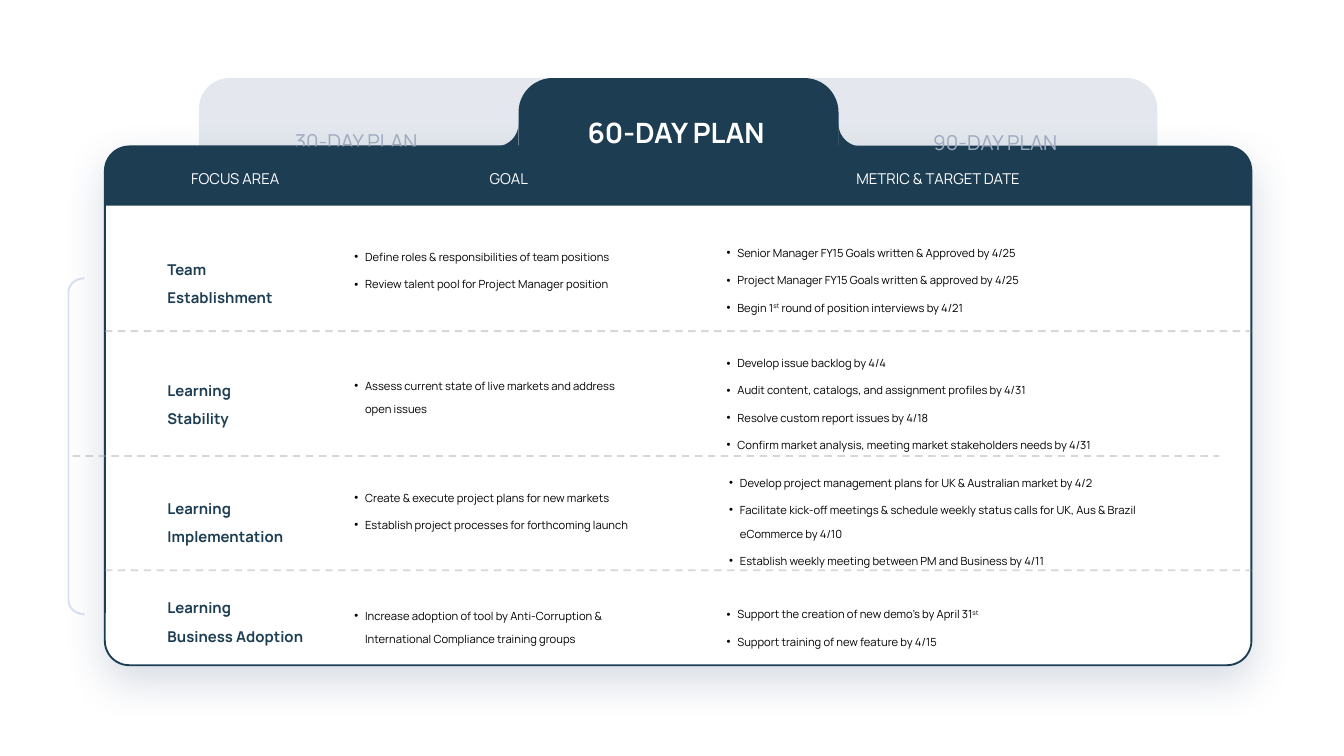
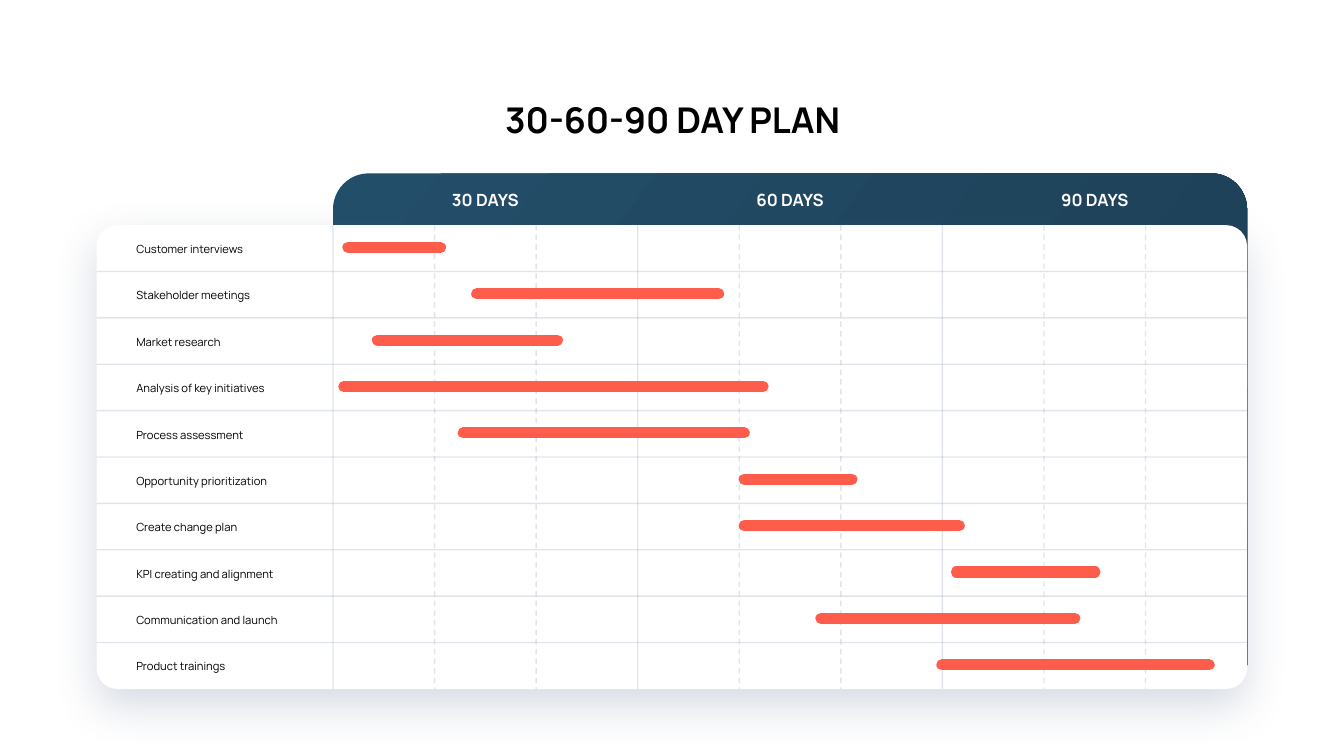
from dataclasses import dataclass
from math import cos, pi, sin

from lxml import etree
from pptx import Presentation
from pptx.dml.color import RGBColor
from pptx.enum.dml import MSO_LINE
from pptx.enum.shapes import MSO_CONNECTOR, MSO_SHAPE
from pptx.enum.text import MSO_ANCHOR, MSO_AUTO_SIZE, PP_ALIGN
from pptx.oxml.ns import qn
from pptx.util import Pt

NAVY = RGBColor(0x1C, 0x3D, 0x52)
BLUE = RGBColor(0x23, 0x4E, 0x6A)
PALE = RGBColor(0xE4, 0xE8, 0xEE)
SLATE = RGBColor(0x9E, 0xAA, 0xBE)
GREY = RGBColor(0xA5, 0xA5, 0xA5)
SKY = RGBColor(0xAF, 0xC2, 0xE5)
CORAL = RGBColor(0xFF, 0x5D, 0x4C)
SHADE = RGBColor(0x47, 0x5D, 0x84)
WHITE = RGBColor(0xFF, 0xFF, 0xFF)
BLACK = RGBColor(0x00, 0x00, 0x00)

FONT = "Manrope"
LEFT, CENTER = PP_ALIGN.LEFT, PP_ALIGN.CENTER
TOP, MIDDLE = MSO_ANCHOR.TOP, MSO_ANCHOR.MIDDLE
NO_FIT = MSO_AUTO_SIZE.NONE
DASH = MSO_LINE.DASH
STRAIGHT = MSO_CONNECTOR.STRAIGHT
RECT, ROUND = MSO_SHAPE.RECTANGLE, MSO_SHAPE.ROUNDED_RECTANGLE
ROUND_TOP, BRACKET = MSO_SHAPE.ROUND_2_SAME_RECTANGLE, MSO_SHAPE.LEFT_BRACKET
COMPARISON, TITLE_ONLY = 4, 5


@dataclass
class Box:
    """A rectangle on the page, in points."""
    left: float
    top: float
    width: float
    height: float

    def inside(self, x, y, width, height):
        """Return a box placed relative to this one."""
        return Box(self.left + x, self.top + y, width, height)

    def lengths(self):
        """Return the four lengths for python-pptx."""
        return [Pt(value) for value in (self.left, self.top, self.width, self.height)]


@dataclass
class Row:
    """One focus area with its goals and metrics; places are relative to the card."""
    name: list
    name_place: tuple
    goals: list
    goals_place: tuple
    metrics: list
    metrics_place: tuple
    anchor: object = TOP


ROWS = [
    Row(["Team", "Establishment"], (28.1, 52.6, 74, 28.8),
        ["Define roles & responsibilities of team positions",
         "Review talent pool for Project Manager position"], (128.2, 47.5, 193.7, 39.6),
        ["Senior Manager FY15 Goals written & Approved by 4/25",
         "Project Manager FY15 Goals written & approved by 4/25",
         "Begin 1^st^ round of position interviews by 4/21"], (327.6, 45.4, 193.7, 51)),
    Row(["Learning", "Stability"], (28.1, 117.4, 88.6, 28.8),
        ["Assess current state of live markets and address open issues"],
        (128.2, 116.6, 161.3, 26),
        ["Develop issue backlog by 4/4",
         "Audit content, catalogs, and assignment profiles by 4/31",
         "Resolve custom report issues by 4/18",
         "Confirm market analysis, meeting market stakeholders needs by 4/31"],
        (327.6, 104.4, 269.3, 52.6)),
    Row(["Learning", "Implementation"], (28.1, 180.7, 96.5, 28.8),
        ["Create & execute project plans for new markets",
         "Establish project processes for forthcoming launch"], (128.2, 176.4, 177.8, 48.2),
        ["Develop project management plans for UK & Australian market by 4/2",
         "Facilitate kick-off meetings & schedule weekly status calls for UK, Aus & Brazil "
         "eCommerce by 4/10",
         "Establish weekly meeting between PM and Business by 4/11"],
        (329, 168.5, 261.4, 54.7)),
    Row(["Learning", "Business Adoption"], (28.1, 237.6, 108.7, 28.8),
        ["Increase adoption of tool by Anti-Corruption & International Compliance "
         "training groups"], (128.2, 239.8, 165.6, 26),
        ["Support the creation of new demo’s by April 31^st^",
         "Support training of new feature by 4/15"], (327.6, 239, 263.5, 27.4), MIDDLE),
]

HEADINGS = [("FOCUS AREA", 28.1, 83.5), ("GOAL", 179.3, 74.2),
            ("METRIC & TARGET DATE", 367.9, 157)]
DIVIDERS = [(0, 227), (-17.3, 165.8), (0, 98.9)]

TASKS = [
    ("Customer interviews", 72.7, 8, 57.6),
    ("Stakeholder meetings", 77, 77, 206.6),
    ("Market research", 59.8, 23.8, 120.2),
    ("Analysis of key initiatives", 85, 5.8, 230.4),
    ("Process assessment", 72, 69.8, 220.3),
    ("Opportunity prioritization", 86.4, 220.3, 278),
    ("Create change plan", 72, 220.3, 335.5),
    ("KPI creating and alignment", 92.9, 334, 408.2),
    ("Communication and launch", 96.5, 261.4, 397.4),
    ("Product trainings", 62.6, 326.2, 469.4),
]


def place(holder, box):
    """Move a placeholder to a box and to the front of the page."""
    holder.left, holder.top, holder.width, holder.height = box.lengths()
    holder.element.getparent().append(holder.element)
    return holder


def write(holder, lines, size, color, bold=False, align=LEFT, anchor=TOP,
          spacing=1.0, bullets=False):
    """Fill a shape with paragraphs; text between carets is raised."""
    frame = holder.text_frame
    frame.word_wrap, frame.auto_size, frame.vertical_anchor = True, NO_FIT, anchor
    frame.margin_left = frame.margin_right = Pt(5.4)
    frame.margin_top = frame.margin_bottom = Pt(2.7)
    for index, line in enumerate(lines):
        para = frame.add_paragraph() if index else frame.paragraphs[0]
        para.alignment, para.line_spacing = align, spacing
        para.space_before = Pt(2 if bullets and index else 0)
        if bullets:
            add_bullet(para)
        for part, words in enumerate(line.split("^")):
            if not words:
                continue
            span = para.add_run()
            span.text = words
            span.font.name, span.font.size, span.font.bold = FONT, Pt(size), bold
            span.font.color.rgb = color
            if part % 2:
                span.font._element.set("baseline", "30000")


def add_bullet(para):
    """Give a paragraph a black dot and a hanging indent."""
    props = para._p.get_or_add_pPr()
    props.set("marL", str(Pt(5.8)))
    props.set("indent", str(-Pt(8.6)))
    color = etree.SubElement(props, qn("a:buClr"))
    etree.SubElement(color, qn("a:srgbClr"), val=str(BLACK))
    etree.SubElement(props, qn("a:buFont"), typeface="Arial")
    etree.SubElement(props, qn("a:buChar"), char="•")


def add_text(page, box, text, size, color, **style):
    """Add a text box with one line."""
    write(page.shapes.add_textbox(*box.lengths()), [text], size, color, **style)


def fade(shape, percent):
    """Make the colours of a shape partly transparent."""
    for color in shape.element.spPr.iter(qn("a:srgbClr")):
        etree.SubElement(color, qn("a:alpha"), val=str(percent * 1000))


def add_panel(page, kind, box, fill, adjust=None):
    """Add a flat shape without outline."""
    shape = page.shapes.add_shape(kind, *box.lengths())
    shape.shadow.inherit = False
    shape.line.fill.background()
    if fill is None:
        shape.fill.background()
    else:
        shape.fill.solid()
        shape.fill.fore_color.rgb = fill
    if adjust is not None:
        shape.adjustments[0] = adjust
    return shape


def add_card(page, box, adjust):
    """Add a white rounded card with a soft shadow."""
    card = add_panel(page, ROUND, box, WHITE, adjust)
    effects = card.element.spPr.find(qn("a:effectLst"))
    shadow = etree.SubElement(effects, qn("a:outerShdw"), blurRad=str(Pt(23)),
                              dist=str(Pt(8.7)), dir="5400000", rotWithShape="0")
    color = etree.SubElement(shadow, qn("a:srgbClr"), val=str(SHADE))
    etree.SubElement(color, qn("a:alpha"), val="22000")
    return card


def add_line(page, start, end, color, width, dash=None, opacity=None, rounded=False):
    """Add a straight line between two points."""
    line = page.shapes.add_connector(STRAIGHT, *[Pt(value) for value in (*start, *end)])
    line.line.color.rgb, line.line.width = color, Pt(width)
    if dash:
        line.line.dash_style = dash
    if opacity:
        fade(line, opacity)
    if rounded:
        line.element.spPr.find(qn("a:ln")).set("cap", "rnd")
    etree.SubElement(line.element.spPr, qn("a:effectLst"))


def add_fillet(page, x, y, side):
    """Add the concave corner that joins the tab to the card."""
    radius, steps = 12.2, 12
    builder = page.shapes.build_freeform(Pt(x), Pt(y))
    angles = [pi / 2 * step / steps for step in range(steps + 1)]
    builder.add_line_segments(
        [(Pt(x + side * radius * (1 - cos(angle))), Pt(y - radius * (1 - sin(angle))))
         for angle in angles])
    fillet = builder.convert_to_shape()
    fillet.shadow.inherit = False
    fillet.fill.solid()
    fillet.fill.fore_color.rgb = NAVY
    fillet.line.fill.background()


def draw_tabs(page, card):
    """Draw the front tab and the first faded label above the card."""
    tab = card.inside(221.6, -36.7, 171.4, 36.7)
    add_panel(page, ROUND_TOP, tab, NAVY, 0.497)
    add_fillet(page, tab.left + tab.width, card.top, 1)
    add_fillet(page, tab.left, card.top, -1)
    add_text(page, card.inside(92.9, -28.8, 83.5, 28), "30-DAY PLAN", 11, SLATE,
             align=CENTER, spacing=2.27)
    title = place(page.shapes.title, card.inside(249.1, -28.8, 113.8, 29.5))
    write(title, ["60-DAY PLAN"], 15, WHITE, True, CENTER, MIDDLE, 1.7)


def draw_header(page, card):
    """Draw the band with the column headings."""
    add_panel(page, ROUND_TOP, card.inside(0, 0, card.width, 31.7), NAVY, 0.401)
    for heading, x, width in HEADINGS:
        cell = add_panel(page, RECT, card.inside(x, 10, width, 14.4), NAVY)
        write(cell, [heading], 8, WHITE, align=CENTER, anchor=MIDDLE)


def draw_row(page, card, row, body):
    """Write one focus area with its two lists."""
    name = page.shapes.add_textbox(*card.inside(*row.name_place).lengths())
    write(name, row.name, 8, NAVY, True, anchor=row.anchor, spacing=1.6)
    goals = page.shapes.add_textbox(*card.inside(*row.goals_place).lengths())
    metrics = place(body, card.inside(*row.metrics_place))
    for holder, items in ((goals, row.goals), (metrics, row.metrics)):
        write(holder, items, 6, BLACK, spacing=1.75, bullets=True)


def build_sixty_day_plan(deck, card):
    """Build the page with the 60-day goals and metrics."""
    page = deck.slides.add_slide(deck.slide_layouts[COMPARISON])
    bodies = [holder for holder in page.placeholders if holder.placeholder_format.idx]
    add_panel(page, ROUND_TOP, card.inside(50.4, -36.7, 513.4, 52.6), PALE, 0.312)
    frame = add_card(page, card, 0.047)
    frame.line.color.rgb, frame.line.width = NAVY, Pt(1)
    draw_tabs(page, card)
    draw_header(page, card)
    for row, body in zip(ROWS, bodies):
        draw_row(page, card, row, body)
    for x, y in DIVIDERS:
        left, level = card.left + x, card.top + y
        add_line(page, (left, level), (left + card.width, level), GREY, 1, DASH, 43)
    bracket = add_panel(page, BRACKET, card.inside(-19.5, 70.6, 8.6, 180), None, 0.842)
    bracket.line.color.rgb, bracket.line.width = SKY, Pt(1)
    fade(bracket, 50)
    add_text(page, card.inside(434.9, -24.5, 84.2, 28), "90-DAY PLAN", 11, SLATE,
             align=CENTER, anchor=MIDDLE, spacing=2.27)


def draw_grid(page, card, chart):
    """Rule the rows, the months and their thirds."""
    pitch, step = card.height / len(TASKS), chart.width / 9
    right, bottom = card.left + card.width, card.top + card.height
    for index in range(1, len(TASKS)):
        level = card.top + index * pitch
        add_line(page, (card.left, level), (right, level), SLATE, 0.75, opacity=30)
    for index in range(9):
        x = chart.left + index * step
        add_line(page, (x, card.top), (x, bottom), SLATE, 0.75,
                 DASH if index % 3 else None, 30)


def draw_tasks(page, card, chart):
    """Write the task names and draw their bars."""
    pitch = card.height / len(TASKS)
    for index, (task, width, start, end) in enumerate(TASKS):
        add_text(page, card.inside(15.8, index * pitch + 6.5, width, 13), task, 6, BLACK)
        level = card.top + (index + 0.48) * pitch
        add_line(page, (chart.left + start, level), (chart.left + end, level),
                 CORAL, 6, rounded=True)


def build_timeline(deck, card):
    """Build the page with the 30-60-90 day timeline."""
    page = deck.slides.add_slide(deck.slide_layouts[TITLE_ONLY])
    chart = card.inside(126.6, 0, card.width - 126.6, card.height)
    header = add_panel(page, ROUND_TOP, chart.inside(0, -27.7, chart.width, 263.5), NAVY, 0.073)
    header.fill.gradient()
    header.fill.gradient_angle = 322
    for stop, color, position in zip(header.fill.gradient_stops, (BLUE, NAVY), (0, 1)):
        stop.color.rgb, stop.position = color, position
    add_card(page, card, 0.045)
    draw_grid(page, card, chart)
    month = chart.width / 3
    for index, days in enumerate((30, 60, 90)):
        add_text(page, chart.inside((index + 0.5) * month - 24.8, -21.4, 49.6, 16.6),
                 f"{days} DAYS", 9, WHITE, bold=True, align=CENTER)
    draw_tasks(page, card, chart)
    title = place(page.shapes.title, card.inside(207.4, -78.8, 202.3, 30.2))
    write(title, ["30-60-90 DAY PLAN"], 19, BLACK, True, CENTER, spacing=1.36)


def main():
    """Build and save the deck."""
    deck = Presentation()
    deck.slide_width, deck.slide_height = Pt(720), Pt(405)
    build_sixty_day_plan(deck, Box(56.2, 78.5, 614.2, 277.9))
    build_timeline(deck, Box(51.8, 120.6, 616.3, 248.5))
    deck.save("out.pptx")


if __name__ == "__main__":
    main()
